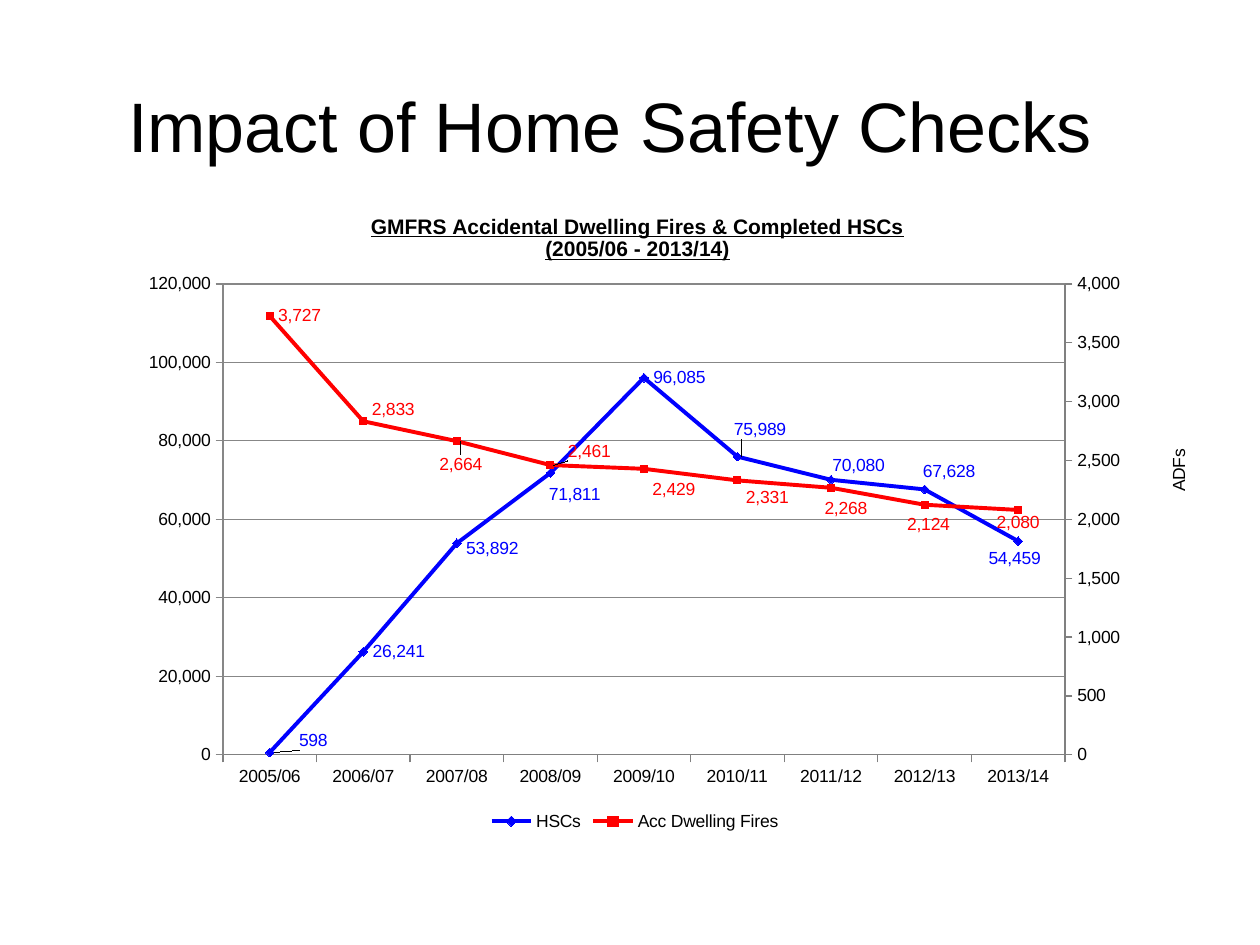
import copy

import pptx
import pptx.chart.axis
import pptx.chart.data
import pptx.dml.color
import pptx.enum.chart
import pptx.enum.text
import pptx.oxml
import pptx.oxml.ns
import pptx.util

EMU_PER_PX = 914400 / 126
CHART_LEFT, CHART_TOP, CHART_WIDTH, CHART_HEIGHT = 74, 185, 1121, 655
FONT = "Arial"
BLACK, GREY, BLUE, RED = "000000", "808080", "0000FF", "FF0000"
YEARS = ["2005/06", "2006/07", "2007/08", "2008/09", "2009/10",
         "2010/11", "2011/12", "2012/13", "2013/14"]
SAFETY_CHECKS = [598, 26241, 53892, 71811, 96085, 75989, 70080, 67628, 54459]
DWELLING_FIRES = [3727, 2833, 2664, 2461, 2429, 2331, 2268, 2124, 2080]

# Point index: shift of its label in px from the usual place right of the marker
CHECK_LABEL_SHIFTS = {0: (20, -12), 2: (0, 5), 3: (-11, 22), 5: (-13, -27),
                      6: (-8, -14), 7: (-11, -18), 8: (-39, 17)}
FIRE_LABEL_SHIFTS = {1: (0, -12), 2: (-26, 23), 3: (9, -14), 4: (0, 21),
                     5: (0, 17), 6: (-15, 21), 7: (-26, 20), 8: (-30, 13)}


def px(length):
    return pptx.util.Emu(round(length * EMU_PER_PX))


def color(hex_string):
    return pptx.dml.color.RGBColor.from_string(hex_string)


def qn(tag):
    return pptx.oxml.ns.qn(tag)


def format_font(font, size=10, hex_color=BLACK, bold=False, underline=False):
    font.name = FONT
    font.size = pptx.util.Pt(size)
    font.bold = bold
    font.underline = underline
    font.color.rgb = color(hex_color)


def write_text(text_frame, text, **font_format):
    text_frame.text = text
    for paragraph in text_frame.paragraphs:
        paragraph.alignment = pptx.enum.text.PP_ALIGN.CENTER
        for run in paragraph.runs:
            format_font(run.font, **font_format)


def set_layout(element, index=1, **values):
    """Give a chart part a manual layout, adding c:layout at index if missing."""
    layout = element.find(qn("c:layout"))
    if layout is None:
        layout = pptx.oxml.parse_xml(f"<c:layout {pptx.oxml.ns.nsdecls('c')}/>")
        element.insert(index, layout)
    manual = layout.makeelement(qn("c:manualLayout"))
    layout.append(manual)
    for name, value in values.items():
        child = manual.makeelement(qn(f"c:{name}"))
        child.set("val", str(value))
        manual.append(child)


def place(element, left, top, width=None, height=None, index=1, **target):
    """Place a chart part by slide px."""
    values = {"xMode": "edge", "yMode": "edge",
              "x": round((left - CHART_LEFT) / CHART_WIDTH, 4),
              "y": round((top - CHART_TOP) / CHART_HEIGHT, 4)}
    if width:
        values["w"] = round(width / CHART_WIDTH, 4)
        values["h"] = round(height / CHART_HEIGHT, 4)
    set_layout(element, index, **target, **values)


def add_title(slide):
    title = slide.shapes.title
    title.left, title.top, title.width, title.height = px(34), px(76), px(1152), px(97)
    title.text_frame.vertical_anchor = pptx.enum.text.MSO_ANCHOR.MIDDLE
    write_text(title.text_frame, "Impact of Home Safety Checks", size=40)


def add_chart(slide):
    data = pptx.chart.data.CategoryChartData(number_format="#,##0")
    data.categories = YEARS
    data.add_series("HSCs", SAFETY_CHECKS)
    data.add_series("Acc Dwelling Fires", DWELLING_FIRES)
    frame = slide.shapes.add_chart(
        pptx.enum.chart.XL_CHART_TYPE.LINE_MARKERS,
        px(CHART_LEFT), px(CHART_TOP), px(CHART_WIDTH), px(CHART_HEIGHT), data)
    format_font(frame.chart.font)
    return frame.chart


def add_right_axis(chart):
    """Move the second series to its own plot with a value axis at the right."""
    left_plot = chart.plots[0]._element
    plot_area = left_plot.getparent()
    right_plot = copy.deepcopy(left_plot)
    left_plot.remove(left_plot.findall(qn("c:ser"))[1])
    right_plot.remove(right_plot.findall(qn("c:ser"))[0])
    left_plot.addnext(right_plot)

    category_axis = copy.deepcopy(plot_area.find(qn("c:catAx")))
    value_axis = copy.deepcopy(plot_area.find(qn("c:valAx")))
    last_axis = plot_area.find(qn("c:valAx"))
    last_axis.addnext(value_axis)
    value_axis.addnext(category_axis)
    ids = ["50010", "50020"]
    for axis_id, new_id in zip(right_plot.findall(qn("c:axId")), ids):
        axis_id.set("val", new_id)
    for axis, own_id, other_id in ((category_axis, *ids), (value_axis, *ids[::-1])):
        axis.find(qn("c:axId")).set("val", own_id)
        axis.find(qn("c:crossAx")).set("val", other_id)
    value_axis.find(qn("c:axPos")).set("val", "r")
    value_axis.find(qn("c:crosses")).set("val", "max")
    pptx.chart.axis.CategoryAxis(category_axis).visible = False
    return pptx.chart.axis.ValueAxis(value_axis)


def format_axis(axis):
    axis.major_tick_mark = pptx.enum.chart.XL_TICK_MARK.OUTSIDE
    axis.minor_tick_mark = pptx.enum.chart.XL_TICK_MARK.NONE
    axis.format.line.color.rgb = color(GREY)
    format_font(axis.tick_labels.font)


def format_value_axis(axis, title, left, top, maximum, step):
    format_axis(axis)
    axis.minimum_scale, axis.maximum_scale, axis.major_unit = 0, maximum, step
    axis.tick_labels.number_format = "#,##0"
    axis.tick_labels.number_format_is_linked = False
    text_frame = axis.axis_title.text_frame
    write_text(text_frame, title)
    text_frame._txBody.bodyPr.set("rot", "-5400000")
    text_frame._txBody.bodyPr.set("vert", "horz")
    place(axis.axis_title._element, left, top)


def format_series(series, hex_color, marker_style, marker_size, label_shifts):
    series.smooth = False
    series.format.line.color.rgb = color(hex_color)
    series.format.line.width = pptx.util.Pt(2.25)
    series.marker.style = marker_style
    series.marker.size = marker_size
    series.marker.format.fill.solid()
    series.marker.format.fill.fore_color.rgb = color(hex_color)
    series.marker.format.line.color.rgb = color(hex_color)

    right = pptx.enum.chart.XL_LABEL_POSITION.RIGHT
    labels = series.data_labels
    labels.show_value = True
    labels.number_format = "#,##0"
    labels.number_format_is_linked = False
    labels.position = right
    format_font(labels.font, hex_color=hex_color)
    for index in label_shifts:
        label = series.points[index].data_label
        format_font(label.font, hex_color=hex_color)
        label.position = right
    for element in labels._element.findall(qn("c:dLbl")):
        across, down = label_shifts[int(element.find(qn("c:idx")).get("val"))]
        set_layout(element, x=round(across / CHART_WIDTH, 4),
                   y=round(down / CHART_HEIGHT, 4))


def main():
    presentation = pptx.Presentation()
    presentation.slide_width, presentation.slide_height = px(1260), px(945)
    slide = presentation.slides.add_slide(presentation.slide_layouts[5])
    add_title(slide)

    chart = add_chart(slide)
    right_axis = add_right_axis(chart)
    write_text(chart.chart_title.text_frame,
               "GMFRS Accidental Dwelling Fires & Completed HSCs\n(2005/06 - 2013/14)",
               size=12, bold=True, underline=True)
    place(chart.chart_title._element, 367, 210)

    format_axis(chart.category_axis)
    format_value_axis(chart.value_axis, "HSCs", 82, 455, 120000, 20000)
    chart.value_axis.major_gridlines.format.line.color.rgb = color(GREY)
    right_axis.has_major_gridlines = False
    format_value_axis(right_axis, "ADFs", 1164, 446, 4000, 500)

    markers = pptx.enum.chart.XL_MARKER_STYLE
    checks, fires = (plot.series[0] for plot in chart.plots)
    format_series(checks, BLUE, markers.DIAMOND, 5, CHECK_LABEL_SHIFTS)
    format_series(fires, RED, markers.SQUARE, 4, FIRE_LABEL_SHIFTS)
    for plot in chart.plots:
        plot.vary_by_categories = False

    chart.has_legend = True
    chart.legend.position = pptx.enum.chart.XL_LEGEND_POSITION.BOTTOM
    chart.legend.include_in_layout = False
    format_font(chart.legend.font)
    place(chart.legend._element, 485, 812, 300, 25)
    plot_area = chart.plots[0]._element.getparent()
    place(plot_area, 223, 284, 842, 471, index=0, layoutTarget="inner")
    presentation.save("out.pptx")


if __name__ == "__main__":
    main()
